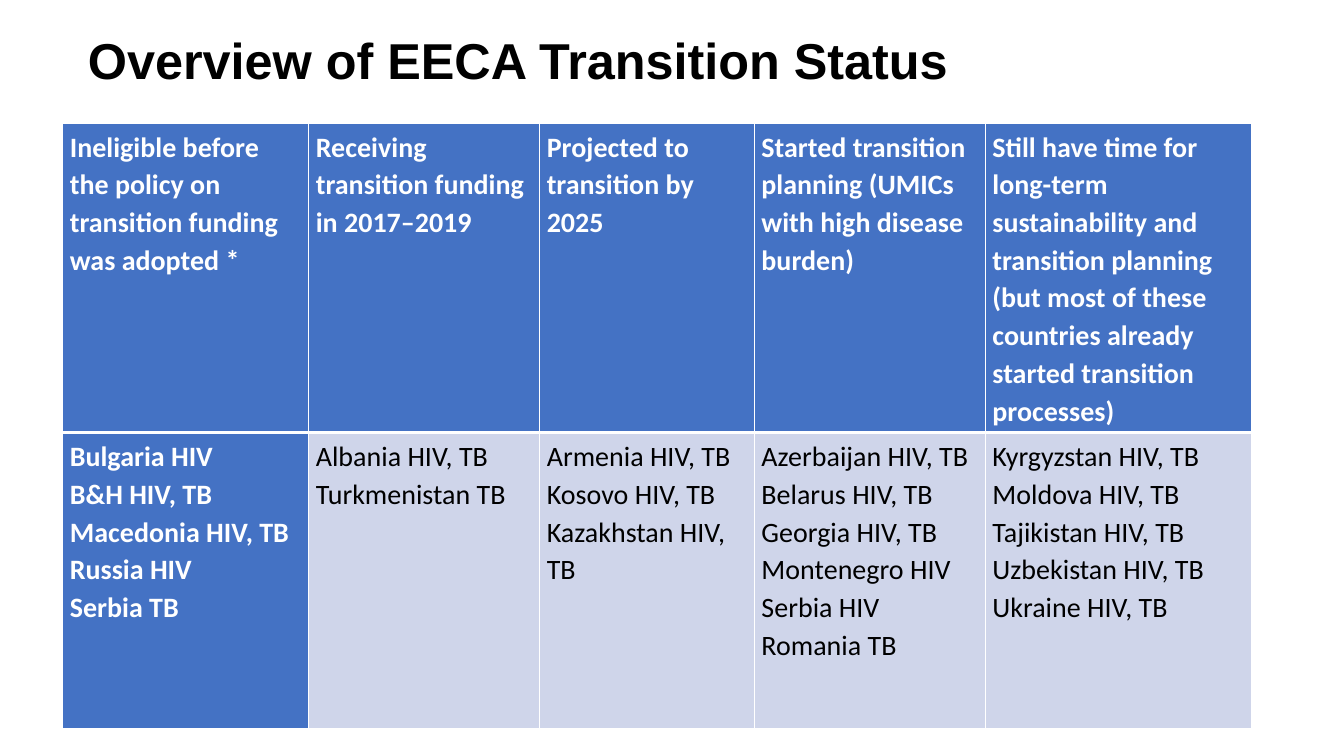
import dataclasses

import lxml.etree
import pptx
import pptx.dml.color
import pptx.enum.text
import pptx.oxml.ns
import pptx.util
from pptx.util import Cm


@dataclasses.dataclass(frozen=True)
class Theme:
    title_font: str = "Arial"
    body_font: str = "Calibri"
    title_size: int = 36
    body_size: int = 20
    dark: str = "000000"
    light: str = "FFFFFF"
    accent: str = "4472C4"
    tint: str = "CFD5EA"


THEME = Theme()

COLUMNS = [
    (6.2, "Ineligible before the policy on transition funding was adopted *",
     ["Bulgaria HIV", "B&H HIV, TB", "Macedonia HIV, TB", "Russia HIV", "Serbia TB"]),
    (5.82, "Receiving transition funding in 2017–2019",
     ["Albania HIV, TB", "Turkmenistan TB"]),
    (5.41, "Projected to transition by 2025",
     ["Armenia HIV, TB", "Kosovo HIV, TB", "Kazakhstan HIV, TB"]),
    (5.82, "Started transition planning (UMICs with high disease burden)",
     ["Azerbaijan HIV, TB", "Belarus HIV, TB", "Georgia HIV, TB", "Montenegro HIV",
      "Serbia HIV", "Romania TB"]),
    (6.7, "Still have time for long-term sustainability and transition planning "
     "(but most of these countries already started transition processes)",
     ["Kyrgyzstan HIV, TB", "Moldova HIV, TB", "Tajikistan HIV, TB", "Uzbekistan HIV, TB",
      "Ukraine HIV, TB"]),
]
ROW_HEIGHTS = (7.62, 7.47)


def rgb(value):
    return pptx.dml.color.RGBColor.from_string(value)


def write_text(text_frame, lines, *, font, size, color, bold=False, spacing=1.0):
    text_frame.word_wrap = True
    for index, line in enumerate(lines):
        paragraph = text_frame.add_paragraph() if index else text_frame.paragraphs[0]
        paragraph.alignment = pptx.enum.text.PP_ALIGN.LEFT
        paragraph.line_spacing = spacing
        run = paragraph.add_run()
        run.text = line
        run.font.name = font
        run.font.size = pptx.util.Pt(size)
        run.font.bold = bold
        run.font.color.rgb = rgb(color)


def set_borders(cell, color, **widths):
    qn = pptx.oxml.ns.qn
    properties = cell._tc.get_or_add_tcPr()
    for side, width in widths.items():
        line = lxml.etree.SubElement(properties, qn(f"a:ln{side}"), w=str(pptx.util.Pt(width)))
        fill = lxml.etree.SubElement(line, qn("a:solidFill"))
        lxml.etree.SubElement(fill, qn("a:srgbClr"), val=color)


def add_title(slide, text, left, top, width, height):
    title = slide.shapes.title
    title.left, title.top, title.width, title.height = left, top, width, height
    text_frame = title.text_frame
    text_frame.auto_size = pptx.enum.text.MSO_AUTO_SIZE.NONE
    text_frame.vertical_anchor = pptx.enum.text.MSO_ANCHOR.MIDDLE
    write_text(text_frame, [text], font=THEME.title_font, size=THEME.title_size,
               color=THEME.dark, bold=True, spacing=0.9)


def format_cell(cell, lines, *, emphasized, bottom):
    cell.margin_left = cell.margin_right = Cm(0.18)
    cell.margin_top = cell.margin_bottom = Cm(0.1)
    set_borders(cell, THEME.light, L=1, R=1, T=4 - bottom, B=bottom)
    cell.fill.solid()
    cell.fill.fore_color.rgb = rgb(THEME.accent if emphasized else THEME.tint)
    write_text(cell.text_frame, lines, font=THEME.body_font, size=THEME.body_size,
               color=THEME.light if emphasized else THEME.dark,
               bold=emphasized, spacing=1.1)


def add_status_table(slide, left, top, width, height):
    table = slide.shapes.add_table(2, len(COLUMNS), left, top, width, height).table
    table.first_col = True
    table.horz_banding = False
    for row, row_height in zip(table.rows, ROW_HEIGHTS):
        row.height = round(height * row_height / sum(ROW_HEIGHTS))
    total_width = sum(column_width for column_width, _, _ in COLUMNS)
    for index, (column_width, heading, countries) in enumerate(COLUMNS):
        table.columns[index].width = round(width * column_width / total_width)
        format_cell(table.cell(0, index), [heading], emphasized=True, bottom=3)
        format_cell(table.cell(1, index), countries, emphasized=index == 0, bottom=1)


def main():
    presentation = pptx.Presentation()
    presentation.slide_width, presentation.slide_height = Cm(33.87), Cm(19.05)
    slide = presentation.slides.add_slide(presentation.slide_layouts[5])
    add_title(slide, "Overview of EECA Transition Status",
              Cm(1.96), Cm(0.38), Cm(29.21), Cm(2.41))
    add_status_table(slide, Cm(1.58), Cm(3.1), Cm(29.95), Cm(15.09))
    presentation.save("out.pptx")


if __name__ == "__main__":
    main()
